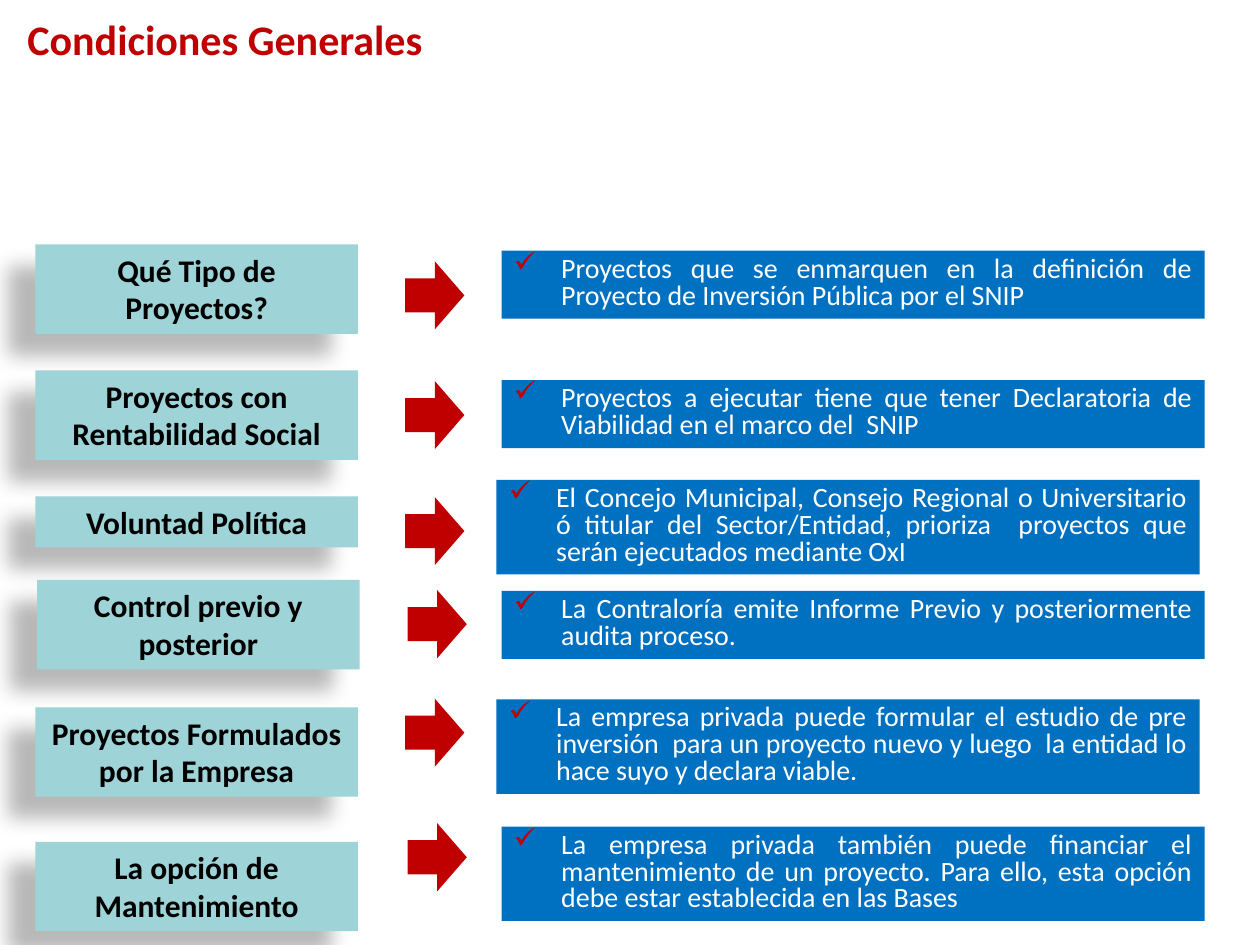
from lxml import etree
from pptx import Presentation, util as u
from pptx.dml.color import RGBColor
from pptx.enum import shapes, text
from pptx.oxml import ns

TOPIC_WIDTH, ANSWER_WIDTH = 184.3, 401.8
ARROW_WIDTH, ARROW_HEIGHT = 38.9, 33.8
INDENT = 27

ROWS = [
    ("Qué Tipo de Proyectos?", 20.2, 139.7, 51.1, 229, 151.9,
     "Proyectos que se enmarquen en la definición de Proyecto de Inversión "
     "Pública por el SNIP", 286.6, 143.3, 38.9),
    ("Proyectos con Rentabilidad Social", 20.2, 211.7, 51.1, 229, 220.3,
     "Proyectos a ejecutar tiene que tener Declaratoria de Viabilidad en el "
     "marco del  SNIP", 286.6, 217.2, 38.9),
    ("Voluntad Política", 20.2, 283.7, 29.1, 229, 286.6,
     "El Concejo Municipal, Consejo Regional o Universitario ó titular del "
     "Sector/Entidad, prioriza  proyectos que serán ejecutados mediante OxI",
     283.7, 274.2, 54),
    ("Control previo y posterior", 21.2, 331.4, 51.1, 230.4, 339.8,
     "La Contraloría emite Informe Previo y posteriormente audita proceso.",
     286.6, 337.7, 38.9),
    ("Proyectos Formulados por la Empresa", 20.2, 404.2, 51.1, 229, 401.8,
     "La empresa privada puede formular el estudio de pre inversión  para un "
     "proyecto nuevo y luego  la entidad lo hace suyo y declara viable.",
     283.7, 399.6, 54),
    ("La opción de Mantenimiento", 20.2, 481, 51.1, 230.4, 473,
     "La empresa privada también puede financiar el mantenimiento de un "
     "proyecto. Para ello, esta opción debe estar establecida en las Bases",
     286.6, 472.3, 54),
]


def color(value):
    """Turn a hex string into a colour."""
    return RGBColor.from_string(value)


def add_filled(slide, preset, box, fill):
    """Add a preset shape with a plain fill, no line and no shadow."""
    figure = slide.shapes.add_shape(preset, *map(u.Pt, box))
    figure.fill.solid()
    figure.fill.fore_color.rgb = color(fill)
    figure.line.fill.background()
    figure.shadow.inherit = False
    return figure


def add_shadow(figure):
    """Cast a soft shadow down and to the left of a shape."""
    effects = figure._element.spPr.find(ns.qn("a:effectLst"))
    shadow = etree.SubElement(
        effects, ns.qn("a:outerShdw"), blurRad=str(u.Pt(11.8)),
        dist=str(u.Pt(19.7)), dir=str(141 * 60000), algn="ctr", rotWithShape="0")
    tone = etree.SubElement(shadow, ns.qn("a:srgbClr"), val="000000")
    etree.SubElement(tone, ns.qn("a:alpha"), val="28000")


def add_check(paragraph):
    """Give a paragraph a hanging red check mark."""
    properties = paragraph._p.get_or_add_pPr()
    properties.set("marL", str(u.Pt(INDENT)))
    properties.set("indent", str(-u.Pt(INDENT)))
    mark_color = etree.SubElement(properties, ns.qn("a:buClr"))
    etree.SubElement(mark_color, ns.qn("a:srgbClr"), val="C00000")
    etree.SubElement(properties, ns.qn("a:buChar"), char="✓")


def write(figure, words, size, ink, align, bold=False, check=False):
    """Write one paragraph into a shape."""
    frame = figure.text_frame
    frame.word_wrap = True
    frame.auto_size = text.MSO_AUTO_SIZE.SHAPE_TO_FIT_TEXT
    frame.vertical_anchor = text.MSO_ANCHOR.TOP
    paragraph = frame.paragraphs[0]
    paragraph.text = words
    paragraph.alignment = align
    if check:
        add_check(paragraph)
        paragraph.line_spacing = 0.8
    font = paragraph.font
    font.name, font.size, font.bold = "Calibri", u.Pt(size), bold
    font.color.rgb = color(ink)


def add_title(slide, words):
    """Add the slide heading."""
    title = slide.shapes.add_textbox(*map(u.Pt, (8.6, 4.3, 663.1, 36)))
    write(title, words, 24, "C00000", text.PP_ALIGN.JUSTIFY, bold=True)


def add_topic(slide, words, left, top, height):
    """Add a shadowed topic box."""
    topic = add_filled(slide, shapes.MSO_SHAPE.RECTANGLE,
                       (left, top, TOPIC_WIDTH, height), "9ED3D7")
    add_shadow(topic)
    write(topic, words, 18, "000000", text.PP_ALIGN.CENTER, bold=True)


def add_arrow(slide, left, top):
    """Add a red arrow that points from topic to answer."""
    arrow = add_filled(slide, shapes.MSO_SHAPE.UP_ARROW,
                       (left, top, ARROW_WIDTH, ARROW_HEIGHT), "C00000")
    arrow.rotation = 90


def add_answer(slide, words, left, top, height):
    """Add a blue box with a checked statement."""
    answer = add_filled(slide, shapes.MSO_SHAPE.RECTANGLE,
                        (left, top, ANSWER_WIDTH, height), "0070C0")
    write(answer, words, 16, "FFFFFF", text.PP_ALIGN.JUSTIFY, check=True)


def main():
    """Build the slide and save it."""
    deck = Presentation()
    deck.slide_width, deck.slide_height = u.Pt(720), u.Pt(540)
    slide = deck.slides.add_slide(deck.slide_layouts[6])
    add_title(slide, "Condiciones Generales")
    for (topic, topic_left, topic_top, topic_height, arrow_left, arrow_top,
         answer, answer_left, answer_top, answer_height) in ROWS:
        add_topic(slide, topic, topic_left, topic_top, topic_height)
        add_arrow(slide, arrow_left, arrow_top)
        add_answer(slide, answer, answer_left, answer_top, answer_height)
    deck.save("out.pptx")


if __name__ == "__main__":
    main()
